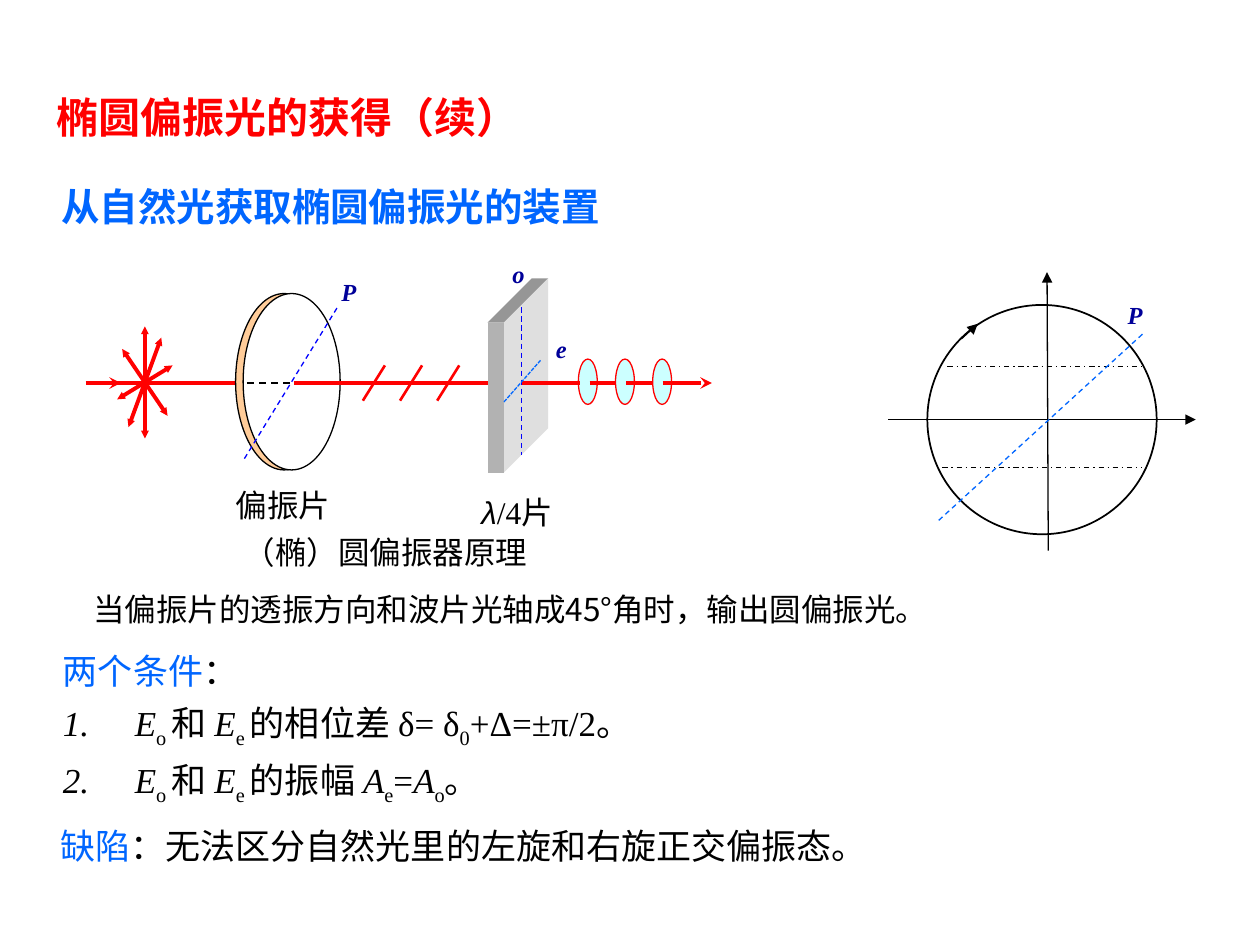
from lxml.etree import SubElement
from pptx import Presentation
from pptx.dml.color import RGBColor
from pptx.enum.dml import MSO_LINE
from pptx.enum.shapes import MSO_CONNECTOR, MSO_SHAPE
from pptx.enum.text import MSO_ANCHOR, PP_ALIGN
from pptx.oxml.ns import qn
from pptx.util import Inches, Pt

BLACK = RGBColor(0, 0, 0)
WHITE = RGBColor(255, 255, 255)
RED = RGBColor(255, 0, 0)
BLUE = RGBColor(0, 0x66, 255)
AXIS_BLUE = RGBColor(0, 0, 255)
NAVY = RGBColor(0, 0, 0x99)
PEACH = RGBColor(255, 0xCC, 0x99)
CYAN = RGBColor(0xCC, 255, 255)
PLATE_SIDE = RGBColor(0xB2, 0xB2, 0xB2)
PLATE_TOP = RGBColor(0x96, 0x96, 0x96)
PLATE_FACE = RGBColor(0xDF, 0xDF, 0xDF)

CHINESE, LATIN, SYMBOL = "Noto Sans CJK SC", "Times New Roman", "Arial"
COLUMNS, ROWS = 100, 75


class Board:
    """Draws on one slide; all lengths are columns and rows of its grid."""

    def __init__(self, presentation):
        self.slide = presentation.slides.add_slide(presentation.slide_layouts[6])
        self.shapes = self.slide.shapes
        self.column = presentation.slide_width / COLUMNS
        self.row = presentation.slide_height / ROWS

    def place(self, *lengths):
        """Turn alternating columns and rows into slide units."""
        return [round(length * (self.row if index % 2 else self.column))
                for index, length in enumerate(lengths)]

    def line(self, start, end, color=BLACK, width=0.75, dash=None,
             head=None, tail=None, arrow_size="med"):
        connector = self.shapes.add_connector(
            MSO_CONNECTOR.STRAIGHT, *self.place(*start, *end))
        connector.line.color.rgb = color
        connector.line.width = Pt(width)
        if dash:
            connector.line.dash_style = dash
        properties = connector._element.spPr
        outline = properties.find(qn("a:ln"))
        for tag, kind in (("a:headEnd", head), ("a:tailEnd", tail)):
            if kind:
                SubElement(outline, qn(tag), type=kind, w=arrow_size, len=arrow_size)
        SubElement(properties, qn("a:effectLst"))

    def ellipse(self, box, fill=None, color=BLACK, width=0.75):
        shape = self.shapes.add_shape(MSO_SHAPE.OVAL, *self.place(*box))
        shape.shadow.inherit = False
        if fill is None:
            shape.fill.background()
        else:
            shape.fill.solid()
            shape.fill.fore_color.rgb = fill
        shape.line.color.rgb = color
        shape.line.width = Pt(width)

    def polygon(self, points, fill):
        corners = [self.place(*point) for point in points]
        builder = self.shapes.build_freeform(*corners[0])
        builder.add_line_segments(corners[1:], close=True)
        shape = builder.convert_to_shape()
        shape.shadow.inherit = False
        shape.fill.solid()
        shape.fill.fore_color.rgb = fill
        shape.line.fill.background()

    def text_box(self, box, anchor=MSO_ANCHOR.TOP, inset=(0, 0)):
        frame = self.shapes.add_textbox(*self.place(*box)).text_frame
        frame.word_wrap = True
        frame.vertical_anchor = anchor
        (frame.margin_left, frame.margin_top,
         frame.margin_right, frame.margin_bottom) = self.place(*inset, *inset)
        return frame

    def styled_run(self, paragraph, text, size, color=BLACK, font=CHINESE,
                   bold=False, italic=False, subscript=False):
        run = paragraph.add_run()
        run.text = text
        run.font.size = Pt(size)
        run.font.color.rgb = color
        run.font.name = font
        run.font.bold = bold
        run.font.italic = italic
        properties = run.font._element
        SubElement(properties, qn("a:ea"), typeface=CHINESE)
        if subscript:
            properties.set("baseline", "-25000")

    def text(self, box, text, size, align=PP_ALIGN.LEFT,
             anchor=MSO_ANCHOR.TOP, inset=(0, 0), **style):
        paragraph = self.text_box(box, anchor, inset).paragraphs[0]
        paragraph.alignment = align
        self.styled_run(paragraph, text, size, **style)

    def label(self, box, text):
        self.text(box, text, 14, PP_ALIGN.CENTER, color=NAVY, font=LATIN,
                  bold=True, italic=True)

    def heading_with_text(self, paragraph, heading, text, font=CHINESE):
        paragraph.alignment = PP_ALIGN.JUSTIFY
        paragraph.line_spacing = 1.2
        self.styled_run(paragraph, heading, 20, BLUE, font)
        self.styled_run(paragraph, text, 20, font=font)

    def numbered(self, paragraph, pieces):
        """Pieces starting with _ are subscripts, those with / are italic."""
        paragraph.alignment = PP_ALIGN.JUSTIFY
        paragraph.line_spacing = 1.2
        properties = paragraph._p.get_or_add_pPr()
        properties.set("marL", str(Inches(0.57)))
        properties.set("indent", str(-Inches(0.57)))
        SubElement(properties, qn("a:buFont"), typeface=LATIN)
        SubElement(properties, qn("a:buAutoNum"), type="arabicPeriod")
        for piece in pieces:
            self.styled_run(paragraph, piece.lstrip("_/"), 20, font=LATIN,
                            italic=piece.startswith("/"),
                            subscript=piece.startswith("_"))


def draw_polarizer(board):
    axis = 30.4
    board.line((6.8, axis), (18.8, axis), RED, 2.25)
    for left, fill in ((18.7, PEACH), (19.3, WHITE)):
        board.ellipse((left, 23.3, 7.7, 14), fill)
    board.line((19.4, 36.4), (26.9, 24.2), AXIS_BLUE, dash=MSO_LINE.DASH)
    board.line((19.6, axis), (23.8, axis), width=1, dash=MSO_LINE.DASH)
    board.line((23.3, axis), (39.1, axis), RED, 2.25)
    for index in range(3):
        left = 28.8 + 2.95 * index
        board.line((left + 1.75, 29), (left, 31.8), RED, 1.5)
    board.line((7.1, axis), (9.6, axis), RED, 2.25, tail="stealth")
    for start, end in (((11.5, 25.9), (11.5, 34.8)), ((13.7, 29), (9.3, 31.7)),
                       ((12.8, 26.8), (10.2, 33.9)), ((9.7, 27.7), (13.3, 33))):
        board.line(start, end, RED, 2.25, head="triangle", tail="triangle",
                   arrow_size="sm")


def draw_wave_plate(board):
    axis = 30.4
    left, edge, right = 38.7, 40, 43.5
    top, bottom, rise = 25.6, 37.5, 3.5
    board.polygon([(left, top), (edge, top), (edge, bottom), (left, bottom)], PLATE_SIDE)
    board.polygon([(left, top), (left + rise, top - rise), (right, top - rise),
                   (edge, top)], PLATE_TOP)
    board.polygon([(edge, top), (right, top - rise), (right, bottom - rise),
                   (edge, bottom)], PLATE_FACE)
    board.line((41.4, 24.4), (41.4, 36.1), AXIS_BLUE, dash=MSO_LINE.DASH)
    for index in range(3):
        board.ellipse((45.9 + 2.95 * index, 28.5, 1.5, 3.6), CYAN, RED)
    for start, end in ((41.4, 46), (46.8, 48.8), (49.7, 51.8)):
        board.line((start, axis), (end, axis), RED, 2.25)
    board.line((52.6, axis), (56.5, axis), RED, 2.25, tail="stealth")
    board.line((40, 31.9), (42.9, 28.6), BLUE, dash=MSO_LINE.SQUARE_DOT)


def draw_circle_diagram(board):
    board.ellipse((73.6, 24.2, 18.2, 18.2), width=1)
    board.line((70.5, 33.3), (94.9, 33.3), tail="triangle")
    board.line((83.2, 43.7), (83.1, 21.6), tail="triangle")
    board.line((75.2, 29.1), (90.9, 29.1), dash=MSO_LINE.DASH_DOT)
    board.line((74.8, 37.1), (90.6, 37.1), dash=MSO_LINE.DASH_DOT)
    board.line((74.5, 41.3), (90.7, 26.5), BLUE, dash=MSO_LINE.DASH)
    board.line((76.3, 26.9), (77.6, 25.7), tail="triangle")


def add_texts(board):
    middle, center = MSO_ANCHOR.MIDDLE, PP_ALIGN.CENTER
    board.text((3.5, 6.8, 79.6, 5), "椭圆偏振光的获得（续）", 24,
               inset=(1, 0.5), color=RED, bold=True)
    board.text((3.9, 14, 58.3, 4.7), "从自然光获取椭圆偏振光的装置", 22,
               inset=(1, 0.5), color=BLUE, bold=True)
    for box, text in (((89.2, 23.8, 1.8, 2.2), "P"), ((26.8, 22, 1.8, 2.2), "P"),
                      ((40.1, 20.6, 2.1, 2.6), "o"), ((43.5, 26.5, 2.1, 2.6), "e")):
        board.label(box, text)
    board.text((17.1, 38.6, 10.7, 2.7), "偏振片", 18, center)
    board.text((12.3, 42.4, 36.6, 2.8), "（椭）圆偏振器原理", 18, center, middle)
    plate_name = board.text_box((37.7, 39.1, 6.7, 2.2)).paragraphs[0]
    plate_name.alignment = center
    board.styled_run(plate_name, "λ", 18, font=SYMBOL, italic=True)
    board.styled_run(plate_name, "/4", 18, font=LATIN)
    board.styled_run(plate_name, "片", 18)
    board.text((7.4, 45.2, 74.1, 6.3),
               "当偏振片的透振方向和波片光轴成45°角时，输出圆偏振光。",
               18, PP_ALIGN.JUSTIFY, middle)

    conditions = board.text_box((5, 51.8, 85.6, 11.3), middle)
    board.heading_with_text(conditions.paragraphs[0], "两个条件", "：", LATIN)
    fields = ["/E", "_o ", "和 ", "/E", "_e "]
    for ending in (["的相位差 δ= δ", "_0", "+Δ=±π/2。"],
                   ["的振幅 ", "/A", "_e", "=", "/A", "_o", "。"]):
        board.numbered(conditions.add_paragraph(), fields + ending)
    defect = board.text_box((4.8, 63.6, 85.6, 6.3), middle)
    board.heading_with_text(defect.paragraphs[0], "缺陷",
                            "：无法区分自然光里的左旋和右旋正交偏振态。")


def main():
    presentation = Presentation()
    presentation.slide_width = Inches(10)
    presentation.slide_height = Inches(7.5)
    board = Board(presentation)
    draw_circle_diagram(board)
    draw_polarizer(board)
    draw_wave_plate(board)
    add_texts(board)
    presentation.save("out.pptx")


if __name__ == "__main__":
    main()
